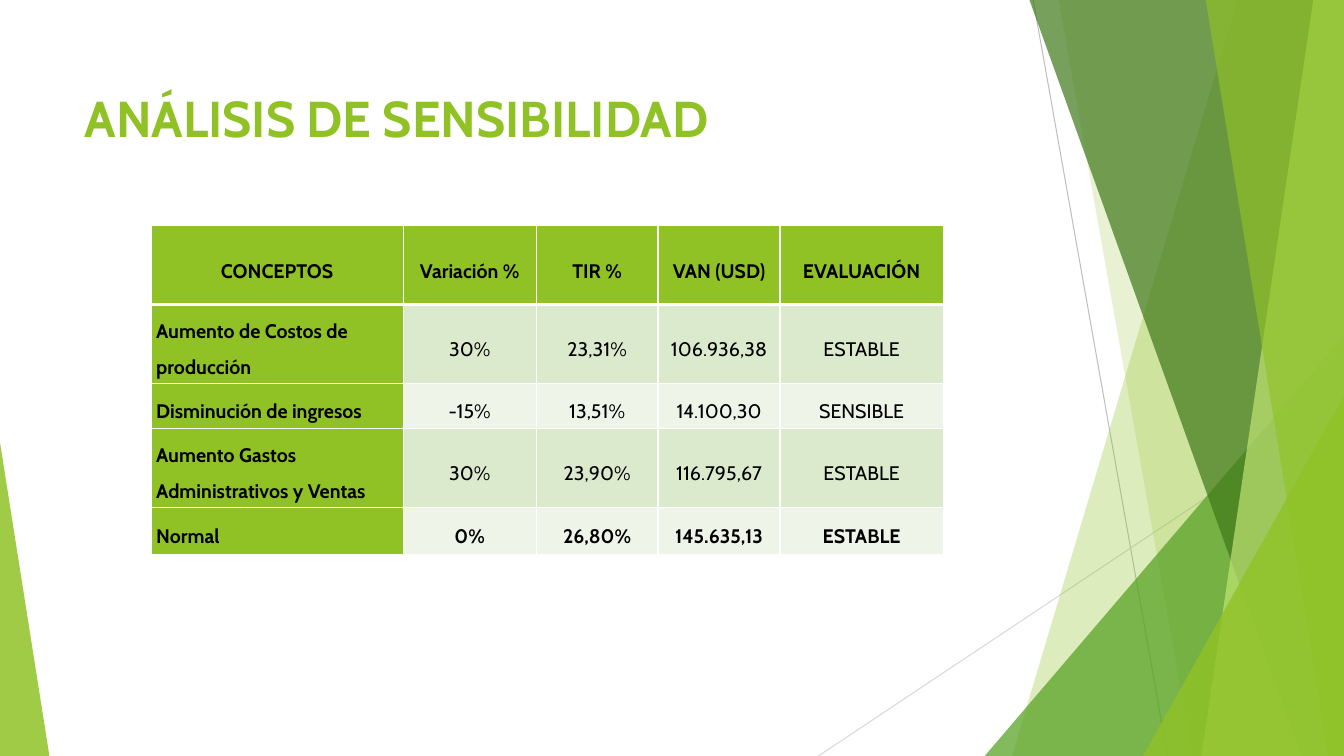
from dataclasses import dataclass

from lxml import etree
from pptx import Presentation
from pptx.dml.color import RGBColor
from pptx.enum import shapes, text
from pptx.oxml import ns
from pptx.util import Pt

C = {"lime": "90C226", "green": "54A021", "forest": "3F7819", "pale": "C0E474",
     "gray": "BFBFBF", "silver": "D9D9D9", "white": "FFFFFF", "black": "000000",
     "band1": "DBE9CD", "band2": "EEF4E8"}
FONT = "Cabin"
W, H, TOP = 960, 540, -0.7


@dataclass
class Line:
    start: tuple[float, float]
    end: tuple[float, float]
    color: str


@dataclass
class Facet:
    """Band reaching the right edge, from a top x to a bottom x."""
    top_x: float
    bottom_x: float
    color: str
    alpha: int


@dataclass
class Triangle:
    left: float
    top: float
    width: float
    apex: int
    color: str
    alpha: int


LINES = [Line((738, 0), (834, H), "gray"), Line((W, 290), (584.6, H), "silver")]
DECOR = [
    Facet(884.2, 722.9, "lime", 30),
    Facet(756, 851.8, "lime", 20),
    Triangle(703.4, 239.8, 256.6, 1, "green", 72),
    Facet(735.1, 929.5, "forest", 70),
    Facet(938.2, 858.2, "pale", 70),
    Facet(861.1, 949, "lime", 65),
    Triangle(816.5, 283, 143.5, 1, "lime", 80),
    Triangle(0, 316.1, 35.3, 0, "lime", 85),
]
COLS = [180, 95, 87.1, 87.1, 116.6]
ROWS = [56.2, 56.2, 32.4, 56.2, 33.8]
DATA = [
    ["CONCEPTOS", "Variación %", "TIR %", "VAN (USD)", "EVALUACIÓN"],
    ["Aumento de Costos de producción", "30%", "23,31%", "106.936,38", "ESTABLE"],
    ["Disminución de ingresos", "-15%", "13,51%", "14.100,30", "SENSIBLE"],
    ["Aumento Gastos Administrativos y Ventas", "30%", "23,90%", "116.795,67", "ESTABLE"],
    ["Normal", "0%", "26,80%", "145.635,13", "ESTABLE"],
]


def rgb(name: str) -> RGBColor:
    return RGBColor.from_string(C[name])


def write(tf, content: str, *, size: float, color: str, bold: bool = False,
          align=text.PP_ALIGN.LEFT, spacing: float = 1.0) -> None:
    p = tf.paragraphs[0]
    p.alignment, p.line_spacing = align, spacing
    r = p.add_run()
    r.text = content
    r.font.name, r.font.size, r.font.bold = FONT, Pt(size), bold
    r.font.color.rgb = rgb(color)


def draw_line(s, line: Line) -> None:
    cx = s.shapes.add_connector(shapes.MSO_CONNECTOR.STRAIGHT,
                                *map(Pt, line.start + line.end))
    cx.line.color.rgb, cx.line.width = rgb(line.color), Pt(0.75)
    etree.SubElement(cx._element.spPr, ns.qn("a:effectLst"))


def draw_decor(s, d: Facet | Triangle) -> None:
    if isinstance(d, Facet):
        fb = s.shapes.build_freeform(Pt(d.top_x), Pt(TOP))
        corners = [(W, TOP), (W, H), (d.bottom_x, H)]
        fb.add_line_segments([(Pt(x), Pt(y)) for x, y in corners], close=True)
        sp = fb.convert_to_shape()
    else:
        sp = s.shapes.add_shape(shapes.MSO_SHAPE.ISOSCELES_TRIANGLE, Pt(d.left),
                                Pt(d.top), Pt(d.width), Pt(H - d.top))
        sp.adjustments[0] = d.apex
    sp.shadow.inherit = False
    sp.line.fill.background()
    sp.fill.solid()
    sp.fill.fore_color.rgb = rgb(d.color)
    clr = sp._element.spPr.find(".//" + ns.qn("a:srgbClr"))
    etree.SubElement(clr, ns.qn("a:alpha"), val=str(d.alpha * 1000))


def set_borders(cell, widths: dict[str, float]) -> None:
    tcPr = cell._tc.get_or_add_tcPr()
    for i, (side, width) in enumerate(widths.items()):
        ln = etree.Element(ns.qn("a:ln" + side), w=str(Pt(width)))
        fill = etree.SubElement(ln, ns.qn("a:solidFill"))
        etree.SubElement(fill, ns.qn("a:srgbClr"), val=C["white"])
        tcPr.insert(i, ln)


def draw_table(s) -> None:
    tbl = s.shapes.add_table(len(ROWS), len(COLS), Pt(108), Pt(161.3),
                             Pt(sum(COLS)), Pt(sum(ROWS))).table
    for col, width in zip(tbl.columns, COLS):
        col.width = Pt(width)
    for row, height in zip(tbl.rows, ROWS):
        row.height = Pt(height)
    for i, values in enumerate(DATA):
        for j, value in enumerate(values):
            cell = tbl.cell(i, j)
            heading = i == 0 or j == 0
            cell.fill.solid()
            cell.fill.fore_color.rgb = rgb("lime" if heading else "band1" if i % 2 else "band2")
            cell.vertical_anchor = text.MSO_ANCHOR.MIDDLE
            cell.margin_left = cell.margin_right = Pt(3.6)
            cell.margin_top = cell.margin_bottom = 0
            set_borders(cell, {"L": 1, "R": 1, "T": 3 if i == 1 else 1, "B": 3 if i == 0 else 1})
            write(cell.text_frame, value, size=14, color="black", spacing=1.5,
                  bold=heading or i == len(DATA) - 1,
                  align=text.PP_ALIGN.LEFT if j == 0 and i else text.PP_ALIGN.CENTER)


def main() -> None:
    prs = Presentation()
    prs.slide_width, prs.slide_height = Pt(W), Pt(H)
    s = prs.slides.add_slide(prs.slide_layouts[5])

    # Background facets
    for line in LINES:
        draw_line(s, line)
    for d in DECOR:
        draw_decor(s, d)

    # Title
    title = s.shapes.title
    title.left, title.top, title.width, title.height = map(Pt, (53.3, 58.3, 676.8, 94.3))
    tf = title.text_frame
    tf.vertical_anchor, tf.word_wrap = text.MSO_ANCHOR.TOP, True
    tf.auto_size = text.MSO_AUTO_SIZE.NONE
    write(tf, "ANÁLISIS DE SENSIBILIDAD", size=36, color="lime", bold=True)

    # Sensitivity table
    draw_table(s)
    prs.save("out.pptx")


if __name__ == "__main__":
    main()
